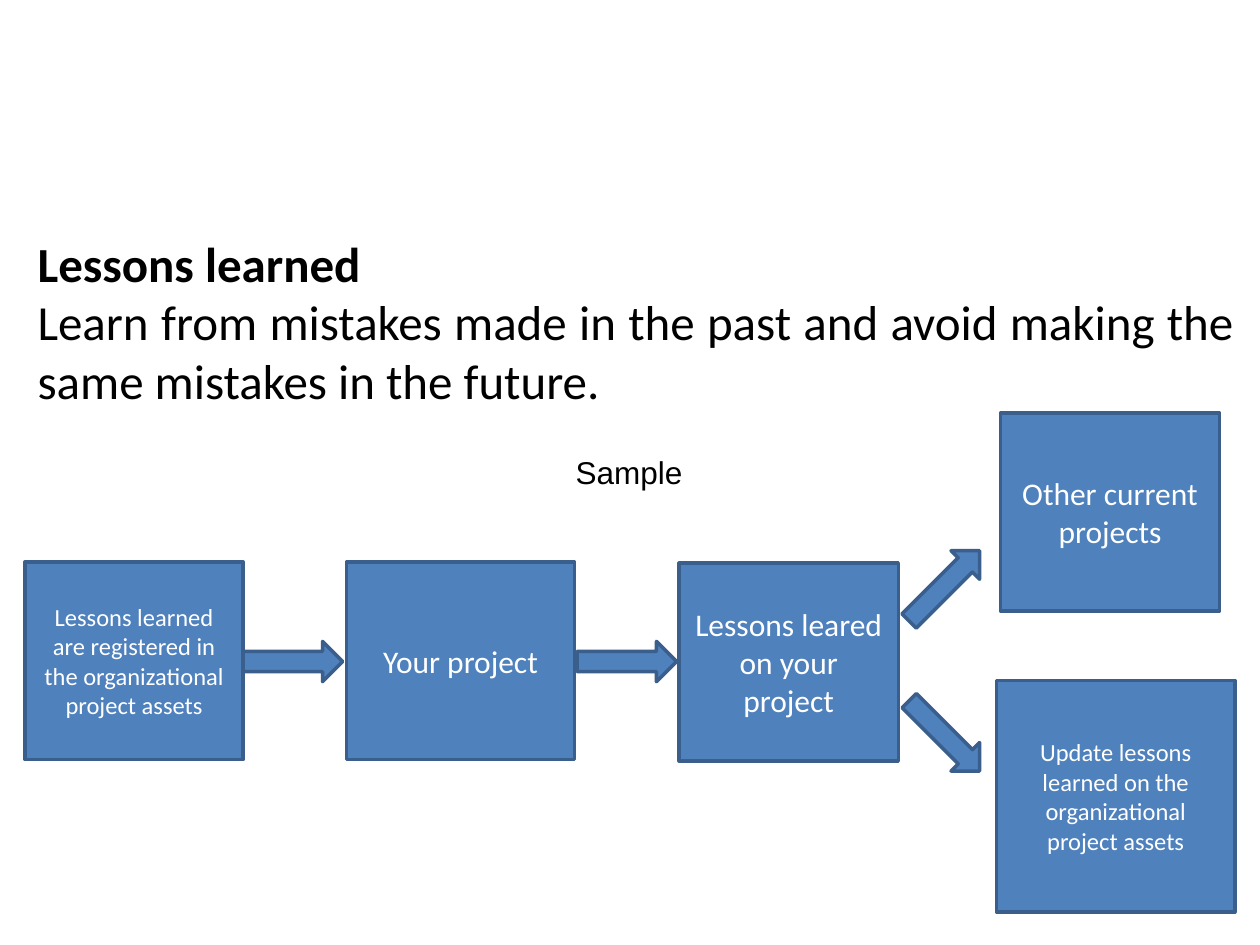
from pptx import Presentation
from pptx.dml.color import RGBColor
from pptx.enum.shapes import MSO_SHAPE as Shape
from pptx.enum.text import MSO_ANCHOR as Anchor, PP_ALIGN as Align
from pptx.util import Inches, Pt

COLORS = {"text": "000000", "fill": "4F81BD", "line": "3A5F8C", "label": "FFFFFF"}

# Content: (text, bold)
INTRO = [
    ("Lessons learned", True),
    ("Learn from mistakes made in the past and avoid making the same "
     "mistakes in the future.", False),
]
CAPTION = "Sample"

# Steps: (label, text size, left, top, width, height)
STEPS = [
    ("Lessons learned are registered in the organizational project assets",
     14, 0.2, 4.46, 1.73, 1.57),
    ("Your project", 18, 2.75, 4.46, 1.81, 1.57),
    ("Lessons leared on your project", 18, 5.39, 4.47, 1.74, 1.57),
    ("Update lessons learned on the organizational project assets",
     14, 7.91, 5.4, 1.89, 1.84),
    ("Other current projects", 18, 7.94, 3.28, 1.74, 1.57),
]

# Arrows: (left, top, rotation), all of one size
ARROW_SIZE = (0.79, 0.32)
ARROWS = [(1.93, 5.09, 0), (4.58, 5.09, 0), (7.1, 5.68, 45), (7.1, 4.49, 315)]


def color(name):
    return RGBColor.from_string(COLORS[name])


def style_font(paragraph, size, color_name, face="Calibri", bold=False):
    font = paragraph.font
    font.name, font.size, font.bold = face, Pt(size), bold
    font.color.rgb = color(color_name)


def add_blue_shape(slide, kind, *box):
    shape = slide.shapes.add_shape(kind, *map(Inches, box))
    shape.shadow.inherit = False
    shape.fill.solid()
    shape.fill.fore_color.rgb = color("fill")
    shape.line.color.rgb = color("line")
    shape.line.width = Pt(2)
    return shape


def add_text_frame(slide, wrap, *box):
    frame = slide.shapes.add_textbox(*map(Inches, box)).text_frame
    frame.word_wrap = wrap
    return frame


def main():
    deck = Presentation()
    deck.slide_width, deck.slide_height = Inches(10), Inches(7.5)
    slide = deck.slides.add_slide(deck.slide_layouts[6])

    # Heading and explanation
    intro = add_text_frame(slide, True, 0.2, 1.8, 9.69, 1.99)
    intro.text = "\n".join(text for text, _ in INTRO)
    for paragraph, (_, bold) in zip(intro.paragraphs, INTRO):
        paragraph.alignment = Align.JUSTIFY
        style_font(paragraph, 28, "text", bold=bold)

    # Process steps
    for label, size, *box in STEPS:
        frame = add_blue_shape(slide, Shape.RECTANGLE, *box).text_frame
        frame.word_wrap = True
        frame.vertical_anchor = Anchor.MIDDLE
        frame.text = label
        frame.paragraphs[0].alignment = Align.CENTER
        style_font(frame.paragraphs[0], size, "label")

    # Arrows between the steps
    for left, top, rotation in ARROWS:
        arrow = add_blue_shape(slide, Shape.RIGHT_ARROW, left, top, *ARROW_SIZE)
        arrow.rotation = rotation

    # Caption of the diagram
    caption = add_text_frame(slide, False, 4.47, 3.55, 1.06, 0.4)
    caption.text = CAPTION
    style_font(caption.paragraphs[0], 18, "text", face="Arial")

    deck.save("out.pptx")


if __name__ == "__main__":
    main()
